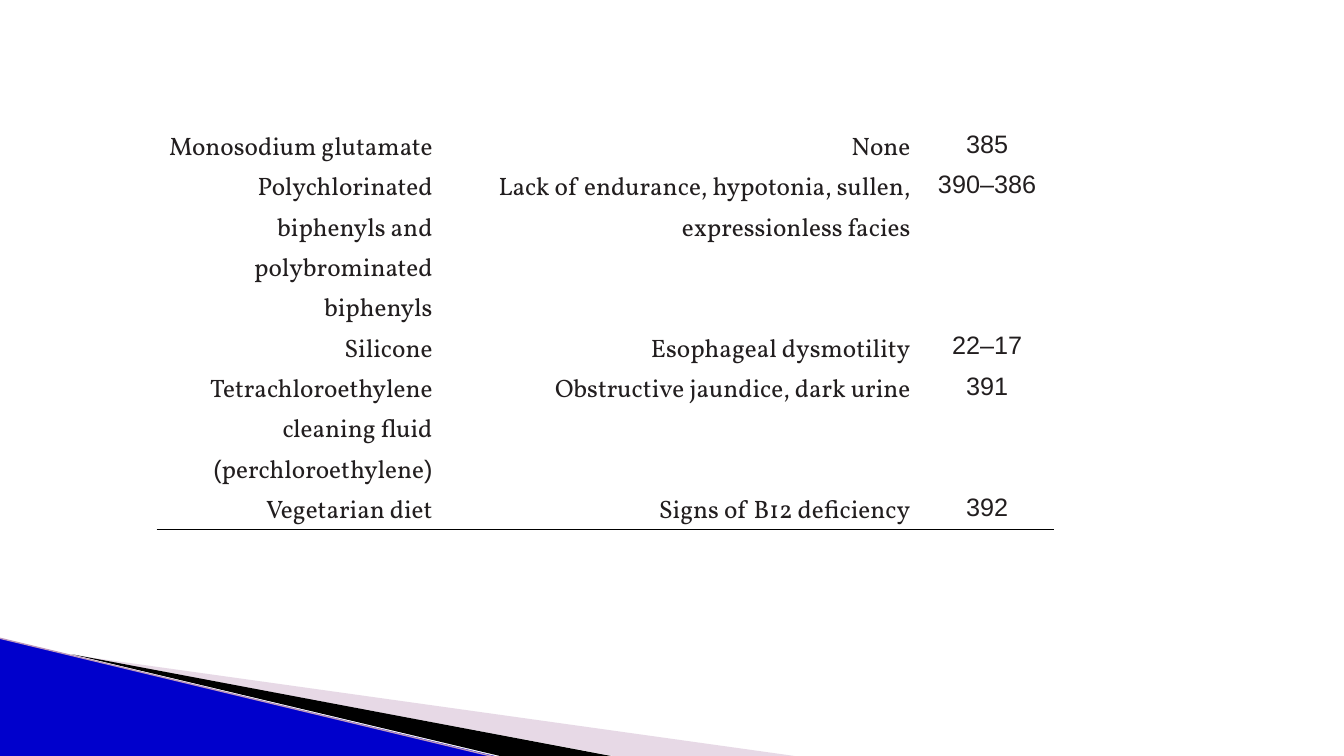
from dataclasses import dataclass

from lxml.etree import SubElement
from pptx import Presentation
from pptx.dml.color import RGBColor
from pptx.enum.shapes import MSO_CONNECTOR, MSO_SHAPE
from pptx.enum.text import PP_ALIGN
from pptx.oxml import parse_xml
from pptx.oxml.ns import nsdecls, qn
from pptx.shapes.base import BaseShape
from pptx.slide import Slide
from pptx.table import _Cell
from pptx.util import Inches, Pt

BLACK = RGBColor(0x00, 0x00, 0x00)
BLUE = RGBColor(0x00, 0x00, 0xCC)
MAUVE = RGBColor(0xC4, 0xA1, 0xC2)
EDGE = RGBColor(0xBD, 0x97, 0xBC)
INK = RGBColor(0x22, 0x1E, 0x1F)
TEXT_FONT = "Vollkorn"
NUMBER_FONT = "Arial"
LINE_HEIGHT = 0.4
COLUMN_WIDTHS = (2.83, 4.74, 1.32)


@dataclass(frozen=True)
class Sweep:
    points: tuple[tuple[float, float], ...]
    color: RGBColor
    opacity: int


@dataclass(frozen=True)
class Exposure:
    substance: str
    finding: str
    references: str
    lines: int


SWEEPS = (
    Sweep(((0.73, 6.5), (7.88, 7.5), (6.08, 7.5)), MAUVE, 40),
    Sweep(((0.71, 6.49), (6.06, 7.5), (4.96, 7.5)), BLACK, 100),
)

EXPOSURES = (
    Exposure("Monosodium glutamate", "None", "385", 1),
    Exposure(
        "Polychlorinated biphenyls and",
        "Lack of endurance, hypotonia, sullen, expressionless facies",
        "386–390",
        2,
    ),
    Exposure("polybrominated biphenyls", "", "", 2),
    Exposure("Silicone", "Esophageal dysmotility", "17–22", 1),
    Exposure(
        "Tetrachloroethylene cleaning fluid",
        "Obstructive jaundice, dark urine",
        "391",
        2,
    ),
    Exposure("(perchloroethylene)", "", "", 1),
    Exposure("Vegetarian diet", "Signs of B12 deficiency", "392", 1),
)


def paint(shape: BaseShape, color: RGBColor, opacity: int = 100) -> None:
    shape.shadow.inherit = False
    shape.fill.solid()
    shape.fill.fore_color.rgb = color
    shape.line.fill.background()
    if opacity < 100:
        color_element = shape._element.spPr.find(".//" + qn("a:srgbClr"))
        SubElement(color_element, qn("a:alpha"), val=str(opacity * 1000))


def draw_sweep(slide: Slide, sweep: Sweep) -> None:
    start, *others = [(Inches(x), Inches(y)) for x, y in sweep.points]
    builder = slide.shapes.build_freeform(*start)
    builder.add_line_segments(others, close=True)
    paint(builder.convert_to_shape(), sweep.color, sweep.opacity)


def draw_corner(slide: Slide) -> None:
    for sweep in SWEEPS:
        draw_sweep(slide, sweep)
    triangle = slide.shapes.add_shape(
        MSO_SHAPE.RIGHT_TRIANGLE, Inches(-0.01), Inches(6.33), Inches(4.96), Inches(1.18)
    )
    paint(triangle, BLUE)
    edge = slide.shapes.add_connector(
        MSO_CONNECTOR.STRAIGHT, Inches(-0.01), Inches(6.33), Inches(4.95), Inches(7.52)
    )
    edge.line.color.rgb = EDGE
    edge.line.width = Pt(0.95)
    SubElement(edge._element.spPr, qn("a:effectLst"))


def write_cell(cell: _Cell, text: str, alignment: PP_ALIGN) -> None:
    cell.margin_left = cell.margin_right = Inches(0.1)
    cell.margin_top = cell.margin_bottom = Inches(0)
    cell.fill.background()
    cell.text_frame.text = text
    paragraph = cell.text_frame.paragraphs[0]
    paragraph.alignment = alignment
    paragraph.line_spacing = 1.15
    paragraph._p.get_or_add_pPr().set("rtl", "1")
    for run in paragraph.runs:
        run.font.size = Pt(18)
        run.font.name = TEXT_FONT
        run.font.color.rgb = INK
        SubElement(run._r.get_or_add_rPr(), qn("a:cs"), typeface=NUMBER_FONT)


def underline_cell(cell: _Cell) -> None:
    border = parse_xml(
        f'<a:lnB {nsdecls("a")} w="{Pt(1)}"><a:solidFill>'
        f'<a:srgbClr val="{BLACK}"/></a:solidFill></a:lnB>'
    )
    cell._tc.get_or_add_tcPr().insert(0, border)


def draw_table(slide: Slide) -> None:
    total_lines = sum(exposure.lines for exposure in EXPOSURES)
    table = slide.shapes.add_table(
        len(EXPOSURES),
        len(COLUMN_WIDTHS),
        Inches(1.56),
        Inches(1.25),
        Inches(sum(COLUMN_WIDTHS)),
        Inches(total_lines * LINE_HEIGHT),
    ).table
    table.first_row = False
    table.horz_banding = False
    for column, width in zip(table.columns, COLUMN_WIDTHS):
        column.width = Inches(width)
    for row, exposure in zip(table.rows, EXPOSURES):
        row.height = Inches(exposure.lines * LINE_HEIGHT)
        substance, finding, references = row.cells
        write_cell(substance, exposure.substance, PP_ALIGN.RIGHT)
        write_cell(finding, exposure.finding, PP_ALIGN.RIGHT)
        write_cell(references, exposure.references, PP_ALIGN.CENTER)
    for cell in table.rows[len(EXPOSURES) - 1].cells:
        underline_cell(cell)


def main() -> None:
    presentation = Presentation()
    presentation.slide_width = Inches(13.33)
    presentation.slide_height = Inches(7.5)
    slide = presentation.slides.add_slide(presentation.slide_layouts[6])
    draw_corner(slide)
    draw_table(slide)
    presentation.save("out.pptx")


if __name__ == "__main__":
    main()
